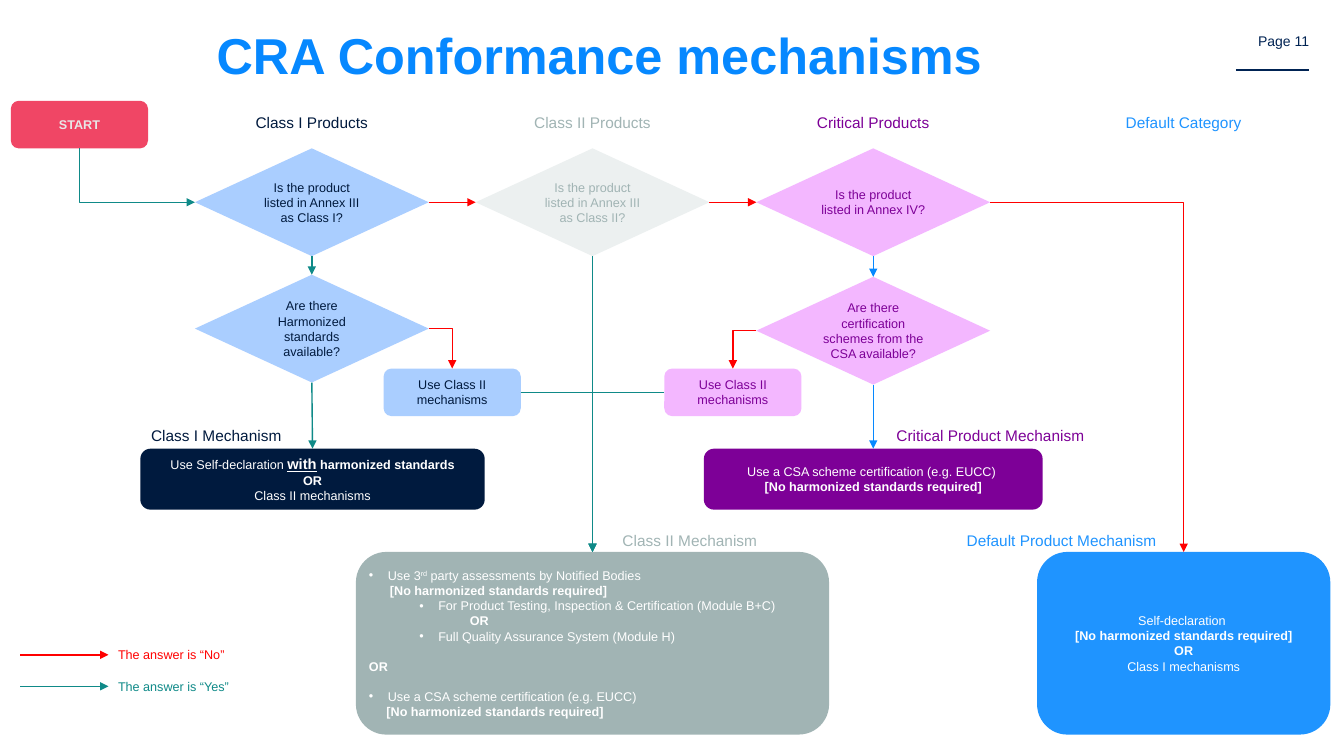
from dataclasses import dataclass
from typing import Optional

import lxml.etree
import pptx
import pptx.dml.color
import pptx.enum.shapes
import pptx.enum.text
import pptx.oxml.ns
import pptx.shapes.autoshape
import pptx.shapes.connector
import pptx.util

COLORS = {
    "title": "0688FF", "page": "002353", "navy": "001A3E", "light_blue": "AACEFF",
    "grey": "A1B4B4", "light_grey": "ECF0F0", "purple": "7D0097", "pink": "F3B7FF",
    "blue": "1F94FF", "red": "F04665", "start_text": "E8E7E7", "white": "FFFFFF",
    "no": "FF0000", "yes": "0F8A88",
}
ALIGN = pptx.enum.text.PP_ALIGN
ANCHOR = pptx.enum.text.MSO_ANCHOR
DECISION = pptx.enum.shapes.MSO_SHAPE.FLOWCHART_DECISION
PROCESS = pptx.enum.shapes.MSO_SHAPE.FLOWCHART_ALTERNATE_PROCESS
TOP, LEFT, BOTTOM, RIGHT = range(4)
Pt = pptx.util.Pt
Box = tuple[float, float, float, float]
Shape = pptx.shapes.autoshape.Shape


@dataclass(frozen=True)
class Run:
    text: str
    bold: bool = False
    underline: bool = False
    size: Optional[float] = None
    superscript: bool = False


@dataclass(frozen=True)
class Line:
    runs: tuple[Run, ...]
    margin: float = 0
    bullet: bool = False
    before: float = 0


@dataclass(frozen=True)
class Node:
    key: str
    kind: int
    box: Box
    fill: str
    color: str
    lines: tuple[Line, ...]


@dataclass(frozen=True)
class Label:
    text: str
    box: Box
    color: str
    size: float = 11
    align: int = ALIGN.CENTER


@dataclass(frozen=True)
class Link:
    start: str
    start_side: int
    end: str
    end_side: int
    color: str
    bent: bool = False


def line(text: str, bold: bool = False, **layout: float) -> Line:
    return Line((Run(text, bold),), **layout)


presentation = pptx.Presentation()
presentation.slide_width, presentation.slide_height = Pt(960), Pt(540)
slide = presentation.slides.add_slide(presentation.slide_layouts[6])


def color_of(name: str) -> pptx.dml.color.RGBColor:
    return pptx.dml.color.RGBColor.from_string(COLORS[name])


def write_text(shape: Shape, lines: tuple[Line, ...], *, color: str, size: float = 9,
               align: int = ALIGN.CENTER, anchor: int = ANCHOR.MIDDLE, bold: bool = False,
               insets: tuple[float, float] = (7.2, 5), spacing: Optional[float] = None) -> None:
    frame = shape.text_frame
    frame.word_wrap = True
    frame.vertical_anchor = anchor
    frame.margin_left = frame.margin_right = Pt(insets[0])
    frame.margin_top = frame.margin_bottom = Pt(insets[1])
    for index, item in enumerate(lines):
        paragraph = frame.add_paragraph() if index else frame.paragraphs[0]
        properties = paragraph._p.get_or_add_pPr()
        if item.margin:
            properties.set("marL", str(Pt(item.margin)))
        if item.bullet:
            properties.set("indent", str(Pt(-13.5)))
            for tag, key, value in (("a:buFont", "typeface", "Arial"), ("a:buChar", "char", "•")):
                lxml.etree.SubElement(properties, pptx.oxml.ns.qn(tag)).set(key, value)
            paragraph.font.size = Pt(size)
        paragraph.alignment = align
        if item.before:
            paragraph.space_before = Pt(item.before)
        if spacing:
            paragraph.line_spacing = spacing
        for part in item.runs:
            run = paragraph.add_run()
            run.text = part.text
            run.font.name = "Arial"
            run.font.size = Pt(part.size or size)
            run.font.bold = bold or part.bold
            run.font.underline = part.underline
            run.font.color.rgb = color_of(color)
            if part.superscript:
                run.font._element.set("baseline", "30000")


def add_node(node: Node) -> Shape:
    shape = slide.shapes.add_shape(node.kind, *map(Pt, node.box))
    shape.shadow.inherit = False
    shape.fill.solid()
    shape.fill.fore_color.rgb = color_of(node.fill)
    shape.line.fill.background()
    listing = node.key == "class 2 mechanism"
    write_text(shape, node.lines, color=node.color,
               align=ALIGN.LEFT if listing else ALIGN.CENTER,
               anchor=ANCHOR.TOP if listing else ANCHOR.MIDDLE,
               insets=(3, 3) if node.kind == DECISION else (3, 5) if listing else (7.2, 5))
    return shape


def add_label(label: Label, **layout) -> None:
    shape = slide.shapes.add_textbox(*map(Pt, label.box))
    options = {"anchor": ANCHOR.TOP, "insets": (7.2, 3.6), **layout}
    write_text(shape, (line(label.text),), color=label.color, size=label.size,
               align=label.align, **options)


def add_line(points: Box, color: str, width: float = 1, arrow: bool = True,
             bent: bool = False) -> pptx.shapes.connector.Connector:
    kinds = pptx.enum.shapes.MSO_CONNECTOR
    connector = slide.shapes.add_connector(kinds.ELBOW if bent else kinds.STRAIGHT,
                                           *map(Pt, points))
    connector.line.color.rgb = color_of(color)
    connector.line.width = Pt(width)
    properties = connector._element.spPr
    if arrow:
        tail = lxml.etree.SubElement(connector.line._get_or_add_ln(), pptx.oxml.ns.qn("a:tailEnd"))
        tail.set("type", "triangle")
    if bent:
        properties.find(pptx.oxml.ns.qn("a:prstGeom")).set("prst", "bentConnector2")
    lxml.etree.SubElement(properties, pptx.oxml.ns.qn("a:effectLst"))
    return connector


def add_link(link: Link, shapes: dict[str, Shape]) -> None:
    connector = add_line((0, 0, 0, 0), link.color, bent=link.bent)
    connector.begin_connect(shapes[link.start], link.start_side)
    connector.end_connect(shapes[link.end], link.end_side)
    if link.bent and link.start_side == BOTTOM:
        width, height = connector.width, connector.height
        connector.left += (width - height) // 2
        connector.top += (height - width) // 2
        connector.width, connector.height = height, width
        frame = connector._element.spPr.find(pptx.oxml.ns.qn("a:xfrm"))
        frame.set("rot", "16200000")
        frame.set("flipH", "1")


COLUMNS = [139.25 + 200.5 * index for index in range(3)]
DIAMOND = (167, 77)
SMALL = (98, 34)
NO_STANDARDS = "[No harmonized standards required]"

NODES = [
    Node("default mechanism", PROCESS, (740.75, 394.25, 209.5, 130.5), "blue", "white", (
        line("Self-declaration "), line(NO_STANDARDS, True), line("OR", True),
        line("Class I mechanisms"))),
    Node("class 1 listed", DECISION, (COLUMNS[0], 106, *DIAMOND), "light_blue", "navy",
         (line("Is the product listed in Annex III as Class I?"),)),
    Node("standards", DECISION, (COLUMNS[0], 196.25, *DIAMOND), "light_blue", "navy",
         (line("Are there Harmonized standards available?"),)),
    Node("critical listed", DECISION, (COLUMNS[2], 106, *DIAMOND), "pink", "purple",
         (line("Is the product listed in Annex IV?"),)),
    Node("schemes", DECISION, (COLUMNS[2], 197.75, *DIAMOND), "pink", "purple",
         (line("Are there certification schemes from the CSA available?"),)),
    Node("class 2 listed", DECISION, (COLUMNS[1], 106, *DIAMOND), "light_grey", "grey",
         (line("Is the product listed in Annex III as Class II?"),)),
    Node("class 1 fallback", PROCESS, (274, 263.25, *SMALL), "light_blue", "navy",
         (line("Use Class II mechanisms"),)),
    Node("class 2 mechanism", PROCESS, (254.25, 394.25, 338, 130.5), "grey", "white", (
        Line((Run("Use 3"), Run("rd", superscript=True),
              Run(" party assessments by Notified Bodies")), 13.5, True),
        line(NO_STANDARDS, True, margin=15),
        line("For Product Testing, Inspection & Certification (Module B+C)", margin=49.5, bullet=True),
        line("OR", True, margin=72),
        line("Full Quality Assurance System (Module H)", margin=49.5, bullet=True),
        line("OR", True, before=10.8),
        line("Use a CSA scheme certification (e.g. EUCC)", margin=13.5, bullet=True, before=10.8),
        line(NO_STANDARDS, True, margin=12.5))),
    Node("class 1 mechanism", PROCESS, (100.25, 320.5, 246, 43.5), "navy", "white", (
        Line((Run("Use Self-declaration "), Run("with", True, True, 10.5),
              Run(" harmonized standards", True))),
        line("OR", True), line("Class II mechanisms"))),
    Node("critical fallback", PROCESS, (474.5, 263.25, *SMALL), "pink", "purple",
         (line("Use Class II mechanisms"),)),
    Node("critical mechanism", PROCESS, (502.75, 320.5, 242, 43.5), "purple", "white", (
        line("Use a CSA scheme certification (e.g. EUCC) "), line(NO_STANDARDS, True))),
    Node("start", PROCESS, (7.75, 72, *SMALL), "red", "start_text", (line("START", True),)),
]

LINKS = [
    Link("class 1 listed", RIGHT, "class 2 listed", LEFT, "no"),
    Link("class 2 listed", RIGHT, "critical listed", LEFT, "no"),
    Link("class 1 listed", BOTTOM, "standards", TOP, "yes"),
    Link("standards", BOTTOM, "class 1 mechanism", TOP, "yes"),
    Link("schemes", BOTTOM, "critical mechanism", TOP, "title"),
    Link("critical listed", BOTTOM, "schemes", TOP, "title"),
    Link("class 2 listed", BOTTOM, "class 2 mechanism", TOP, "yes"),
    Link("critical fallback", LEFT, "class 2 mechanism", TOP, "yes", True),
    Link("class 1 fallback", RIGHT, "class 2 mechanism", TOP, "yes", True),
    Link("start", BOTTOM, "class 1 listed", LEFT, "yes", True),
    Link("critical listed", RIGHT, "default mechanism", TOP, "no", True),
    Link("standards", RIGHT, "class 1 fallback", TOP, "no", True),
    Link("schemes", LEFT, "critical fallback", TOP, "no", True),
]

LABELS = [
    Label("Default Category", (740.75, 77.5, 209.5, 21), "blue"),
    Label("Critical Products", (COLUMNS[2], 77.5, 167, 21), "purple"),
    Label("Class II Products", (COLUMNS[1], 77.5, 167, 21), "grey"),
    Label("Class I Products", (COLUMNS[0], 77.5, 167, 21), "navy"),
    Label("Class I Mechanism", (94, 301, 121, 21), "navy"),
    Label("Class II Mechanism", (425.75, 376, 134, 21), "grey"),
    Label("Critical Product Mechanism", (615.5, 301, 184, 21), "purple"),
    Label("Default Product Mechanism", (666.25, 376, 184, 21), "blue"),
]

add_line((882.75, 49.75, 935.25, 49.75), "page", width=1.5, arrow=False)
add_label(Label("Page 11", (872.5, 23.25, 62.5, 14.5), "page", 10, ALIGN.RIGHT), insets=(0, 0))
add_label(Label("CRA Conformance mechanisms", (154.75, 22, 700, 32.5), "title", 36, ALIGN.LEFT),
          insets=(0, 0), bold=True, spacing=0.9)
shapes = {node.key: add_node(node) for node in NODES}
for link in LINKS:
    add_link(link, shapes)
for label in LABELS:
    add_label(label)
for answer, color, y in (("No", "no", 467.75), ("Yes", "yes", 490.25)):
    add_line((14.5, y, 77.5, y), color)
    add_label(Label(f"The answer is “{answer}”", (77.25, y - 9, 124, 18), color, 9, ALIGN.LEFT))
presentation.save("out.pptx")
